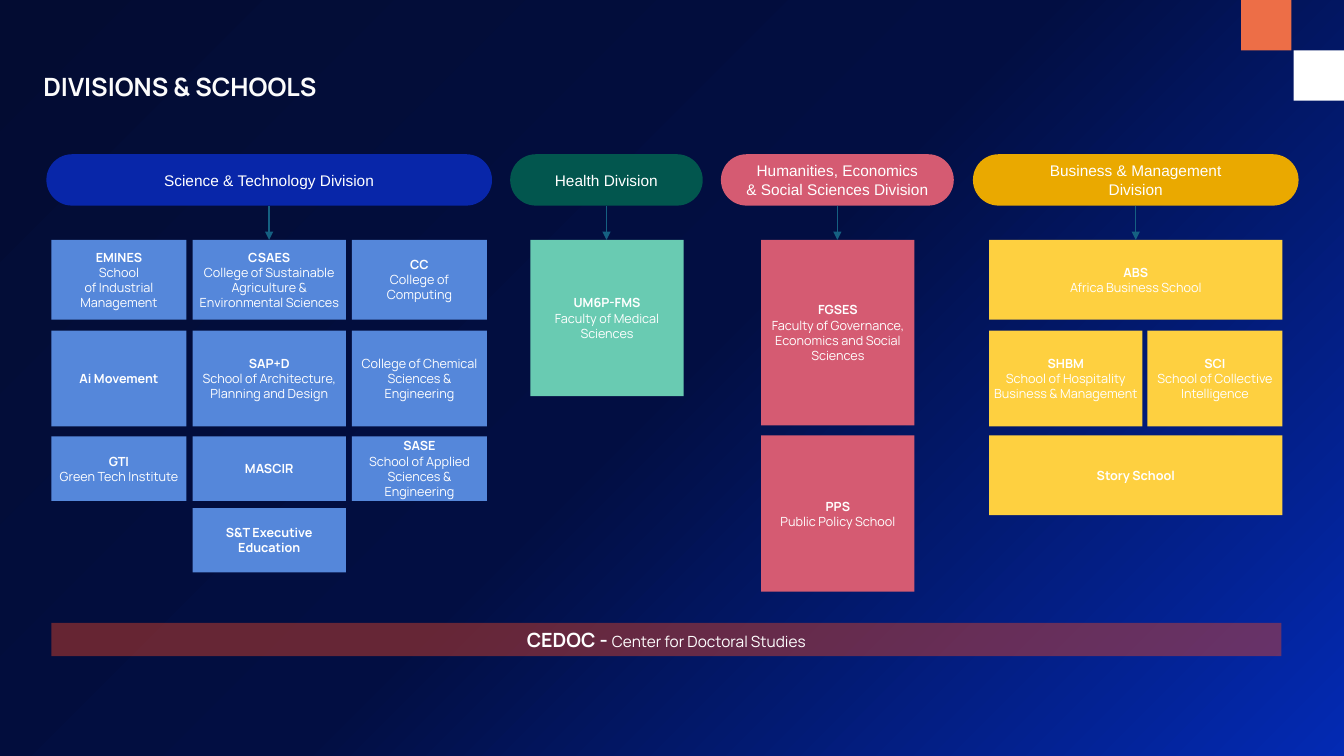
from lxml import etree
from copy import deepcopy
from pptx import Presentation
from pptx import util as u
from pptx.dml.color import RGBColor
from pptx.enum import shapes, text
from pptx.oxml.ns import qn

SLIDE_W, SLIDE_H = 13.33, 7.5
WHITE = "FFFFFF"
COLUMNS = {
    "science left": (0.51, 1.34), "science middle": (1.91, 1.52), "science right": (3.49, 1.34),
    "health": (5.26, 1.52), "humanities": (7.55, 1.52),
    "business left": (9.81, 1.52), "business right": (11.38, 1.34), "business": (9.81, 2.91),
    "all": (0.51, 12.2),
}
ROWS = {
    "division": (1.53, 0.51), "first": (2.38, 0.79), "second": (3.28, 0.95),
    "third": (4.33, 0.64), "fourth": (5.04, 0.64),
    "first tall": (2.38, 1.55), "first taller": (2.38, 1.84),
    "third wide": (4.32, 0.79), "third tall": (4.32, 1.55), "doctoral": (6.18, 0.33),
}
DIVISIONS = [
    ("Science & Technology Division", (0.46, 4.42), "0826A9", "5587DA", [
        ("EMINES", "School\vof Industrial Management", "science left", "first"),
        ("CSAES", "College of Sustainable Agriculture & Environmental Sciences",
         "science middle", "first"),
        ("CC", "College of\vComputing", "science right", "first"),
        ("Ai Movement", "", "science left", "second"),
        ("SAP+D", "School of Architecture, Planning and Design", "science middle", "second"),
        ("", "College of Chemical Sciences & Engineering", "science right", "second"),
        ("GTI", "Green Tech Institute", "science left", "third"),
        ("MASCIR", "", "science middle", "third"),
        ("SASE", "School of Applied Sciences & Engineering", "science right", "third"),
        ("S&T Executive Education", "", "science middle", "fourth"),
    ]),
    ("Health Division", (5.06, 1.91), "02564E", "69CBB2", [
        ("UM6P-FMS", "Faculty of Medical Sciences", "health", "first tall"),
    ]),
    ("Humanities, Economics\v& Social Sciences Division", (7.15, 2.31), "D55B72", "D55B72", [
        ("FGSES", "Faculty of Governance, Economics and Social Sciences",
         "humanities", "first taller"),
        ("PPS", "Public Policy School", "humanities", "third tall"),
    ]),
    ("Business & Management\vDivision", (9.65, 3.23), "EAA900", "FED040", [
        ("ABS", "Africa Business School", "business", "first"),
        ("SHBM", "School of Hospitality Business & Management", "business left", "second"),
        ("SCI", "School of Collective Intelligence", "business right", "second"),
        ("Story School", "", "business", "third wide"),
    ]),
]


def rgb(value):
    return RGBColor.from_string(value)


def style_run(run, size, bold=False, face="Manrope", color=WHITE):
    run.font.size = u.Pt(size)
    run.font.bold = bold
    run.font.name = face
    run.font.color.rgb = rgb(color)


def add_block(slide, column, row, color, kind=shapes.MSO_SHAPE.RECTANGLE):
    (left, width), (top, height) = column, row
    block = slide.shapes.add_shape(kind, *map(u.Inches, (left, top, width, height)))
    block.shadow.inherit = False
    block.fill.solid()
    block.fill.fore_color.rgb = rgb(color)
    block.line.fill.background()
    frame = block.text_frame
    frame.word_wrap = True
    frame.vertical_anchor = text.MSO_ANCHOR.MIDDLE
    frame.margin_left = frame.margin_right = frame.margin_top = frame.margin_bottom = u.Inches(0.04)
    frame.paragraphs[0].alignment = text.PP_ALIGN.CENTER
    return block


def add_school(slide, name, detail, column, row, color):
    frame = add_block(slide, COLUMNS[column], ROWS[row], color).text_frame
    frame.text = "\n".join(filter(None, (name, detail)))
    for paragraph in frame.paragraphs:
        paragraph.alignment = text.PP_ALIGN.CENTER
        for run in paragraph.runs:
            style_run(run, 9, bold=paragraph.text == name)


def add_arrow(slide, center, top, bottom):
    arrow = slide.shapes.add_connector(
        shapes.MSO_CONNECTOR.STRAIGHT, *map(u.Inches, (center, top, center, bottom)))
    arrow.line.color.rgb = rgb("156082")
    arrow.line.width = u.Pt(1)
    etree.SubElement(arrow.line._get_or_add_ln(), qn("a:tailEnd"), type="triangle")
    etree.SubElement(arrow._element.spPr, qn("a:effectLst"))


def add_division(slide, name, column, color, school_color, schools):
    pill = add_block(slide, column, ROWS["division"], color, shapes.MSO_SHAPE.ROUNDED_RECTANGLE)
    pill.adjustments[0] = 0.5
    paragraph = pill.text_frame.paragraphs[0]
    paragraph.text = name
    for run in paragraph.runs:
        style_run(run, 11, face="Arial")
    for school in schools:
        add_school(slide, *school, school_color)
    left, width = column
    add_arrow(slide, left + width / 2, sum(ROWS["division"]), ROWS["first"][0])


def add_doctoral_center(slide):
    bar = add_block(slide, COLUMNS["all"], ROWS["doctoral"], "DD4329")
    tint = bar._element.spPr.find(qn("a:solidFill"))[0]
    etree.SubElement(tint, qn("a:alpha"), val="46000")
    paragraph = bar.text_frame.paragraphs[0]
    for words, size, bold in (("CEDOC - ", 14, True), ("Center for Doctoral Studies", 11, False)):
        run = paragraph.add_run()
        run.text = words
        style_run(run, size, bold)


def paint_background(slide):
    fill = slide.background.fill
    fill.gradient()
    fill.gradient_angle = 315
    stop_list = slide.element.find(".//" + qn("a:gsLst"))
    stop_list.insert(1, deepcopy(stop_list[0]))
    shades = ((0, "030C32"), (0.5, "020E42"), (1, "032AB3"))
    for stop, (position, color) in zip(fill.gradient_stops, shades):
        stop.position = position
        stop.color.rgb = rgb(color)


def set_title(slide, words):
    title = slide.shapes.title
    title.left, title.top, title.width, title.height = map(u.Inches, (0.33, 0.66, 3.69, 0.4))
    frame = title.text_frame
    frame.text = words
    frame.vertical_anchor = text.MSO_ANCHOR.MIDDLE
    frame.paragraphs[0].alignment = text.PP_ALIGN.LEFT
    style_run(frame.paragraphs[0].runs[0], 18, bold=True, color="FCFCFC")


def main():
    deck = Presentation()
    deck.slide_width, deck.slide_height = u.Inches(SLIDE_W), u.Inches(SLIDE_H)
    slide = deck.slides.add_slide(deck.slide_layouts[5])
    paint_background(slide)
    corner = 0.5
    add_block(slide, (SLIDE_W - corner, corner), (corner, corner), WHITE)
    add_block(slide, (12.31, corner), (0, corner), "ED6E47")
    set_title(slide, "DIVISIONS & SCHOOLS")
    for division in DIVISIONS:
        add_division(slide, *division)
    add_doctoral_center(slide)
    deck.save("out.pptx")


if __name__ == "__main__":
    main()
